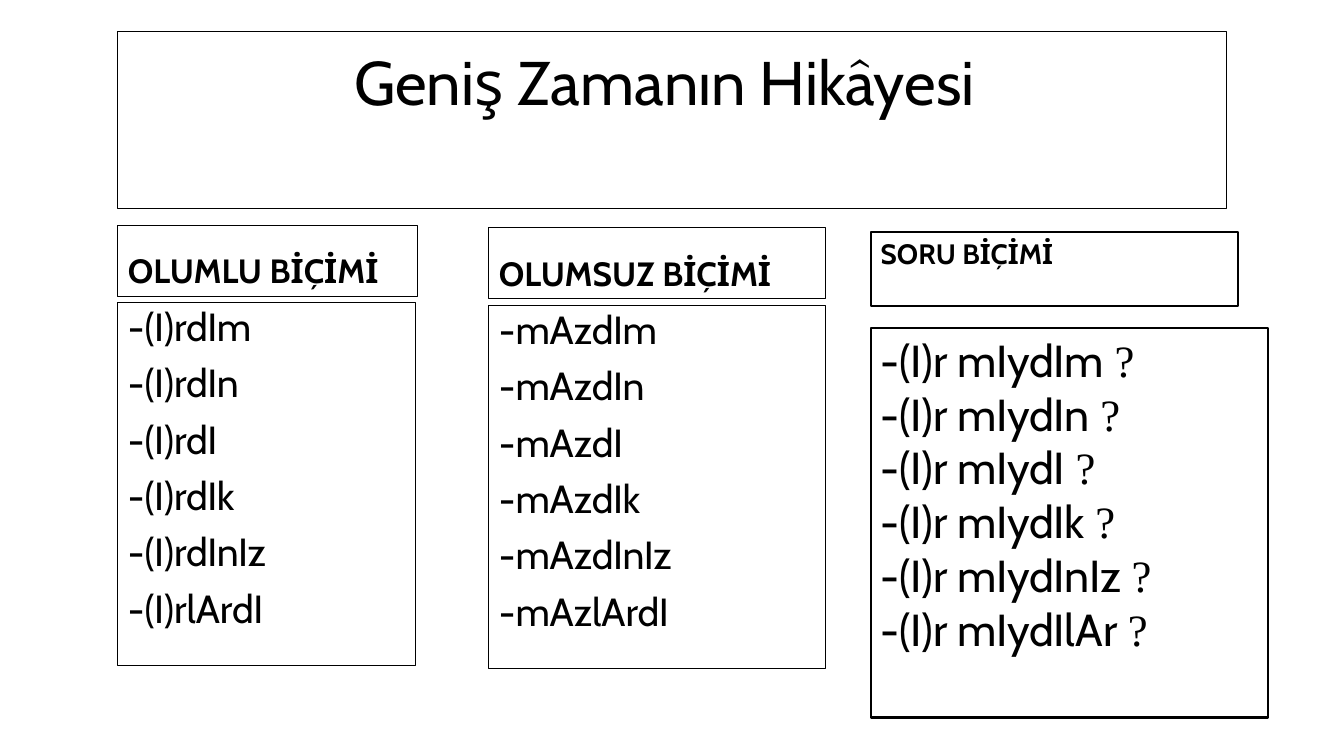
from lxml.etree import SubElement
from pptx import Presentation
from pptx.dml.color import RGBColor
from pptx.enum.text import MSO_ANCHOR, MSO_AUTO_SIZE, PP_ALIGN
from pptx.oxml.ns import qn
from pptx.util import Pt

COLORS = {"ink": "000000", "paper": "FFFFFF"}
FONT = "Cabin"
MARK_FONT = "Times New Roman"

# Verb endings of the three forms
POSITIVE = ["-(I)rdIm", "-(I)rdIn", "-(I)rdI", "-(I)rdIk", "-(I)rdInIz", "-(I)rlArdI"]
NEGATIVE = ["-mAzdIm", "-mAzdIn", "-mAzdI", "-mAzdIk", "-mAzdInIz", "-mAzlArdI"]
QUESTION = ["-(I)r mIydIm ", "-(I)r mIydIn ", "-(I)r mIydI ",
            "-(I)r mIydIk ", "-(I)r mIydInIz ", "-(I)r mIydIlAr "]


def color(name):
    return RGBColor.from_string(COLORS[name])


def frame(shape, box, width, anchor):
    """Place a shape, outline it and return its text frame."""
    shape.left, shape.top, shape.width, shape.height = map(Pt, box)
    shape.line.color.rgb = color("ink")
    shape.line.width = Pt(width)
    text = shape.text_frame
    text.word_wrap = True
    text.auto_size = MSO_AUTO_SIZE.NONE
    text.vertical_anchor = anchor
    return text


def add_run(para, words, size, bold=False, font=FONT):
    run = para.add_run()
    run.text = words
    run.font.name = font
    run.font.size = Pt(size)
    run.font.bold = bold
    run.font.color.rgb = color("ink")


def add_para(text, index):
    return text.add_paragraph() if index else text.paragraphs[0]


def space(para, before):
    para.line_spacing = 0.9
    para.space_before = Pt(before)


def set_title(shape, words, box):
    text = frame(shape, box, 0.75, MSO_ANCHOR.MIDDLE)
    text.margin_right = Pt(18)
    text.margin_bottom = Pt(52)
    para = text.paragraphs[0]
    para.alignment = PP_ALIGN.CENTER
    space(para, 0)
    add_run(para, words, 44)


def set_head(shape, words, box):
    para = frame(shape, box, 0.75, MSO_ANCHOR.BOTTOM).paragraphs[0]
    space(para, 10)
    add_run(para, words, 24, True)


def set_list(shape, items, box):
    text = frame(shape, box, 0.75, MSO_ANCHOR.TOP)
    for index, item in enumerate(items):
        para = add_para(text, index)
        space(para, 10)
        add_run(para, item, 28)
        # Hanging indent without a bullet
        props = para._p.get_or_add_pPr()
        props.set("marL", str(Pt(18)))
        props.set("indent", str(Pt(-18)))
        SubElement(props, qn("a:buNone"))


def add_box(slide, box):
    shape = slide.shapes.add_textbox(*map(Pt, box))
    shape.fill.solid()
    shape.fill.fore_color.rgb = color("paper")
    return frame(shape, box, 1.5, MSO_ANCHOR.TOP)


def main():
    deck = Presentation()
    deck.slide_width, deck.slide_height = Pt(960), Pt(540)
    slide = deck.slides.add_slide(deck.slide_layouts.get_by_name("Comparison"))
    title, head_a, list_a, head_b, list_b = slide.placeholders

    # Title
    set_title(title, "Geniş Zamanın Hikâyesi", (84.2, 22.3, 792, 126.7))

    # Positive and negative forms
    set_head(head_a, "OLUMLU BİÇİMİ", (84.2, 161.2, 214, 50.4))
    set_list(list_a, POSITIVE, (84.2, 216, 212.5, 259.2))
    set_head(head_b, "OLUMSUZ BİÇİMİ", (349.2, 162.7, 240.5, 50.4))
    set_list(list_b, NEGATIVE, (349.2, 218.2, 240.5, 259.2))

    # Question form
    text = add_box(slide, (622, 234, 283.7, 278.6))
    for index, item in enumerate(QUESTION):
        para = add_para(text, index)
        add_run(para, item, 32)
        add_run(para, "?", 32, font=MARK_FONT)
    text = add_box(slide, (622, 165.6, 262, 53.3))
    add_run(text.paragraphs[0], "SORU BİÇİMİ", 20, True)

    deck.save("out.pptx")


if __name__ == "__main__":
    main()
